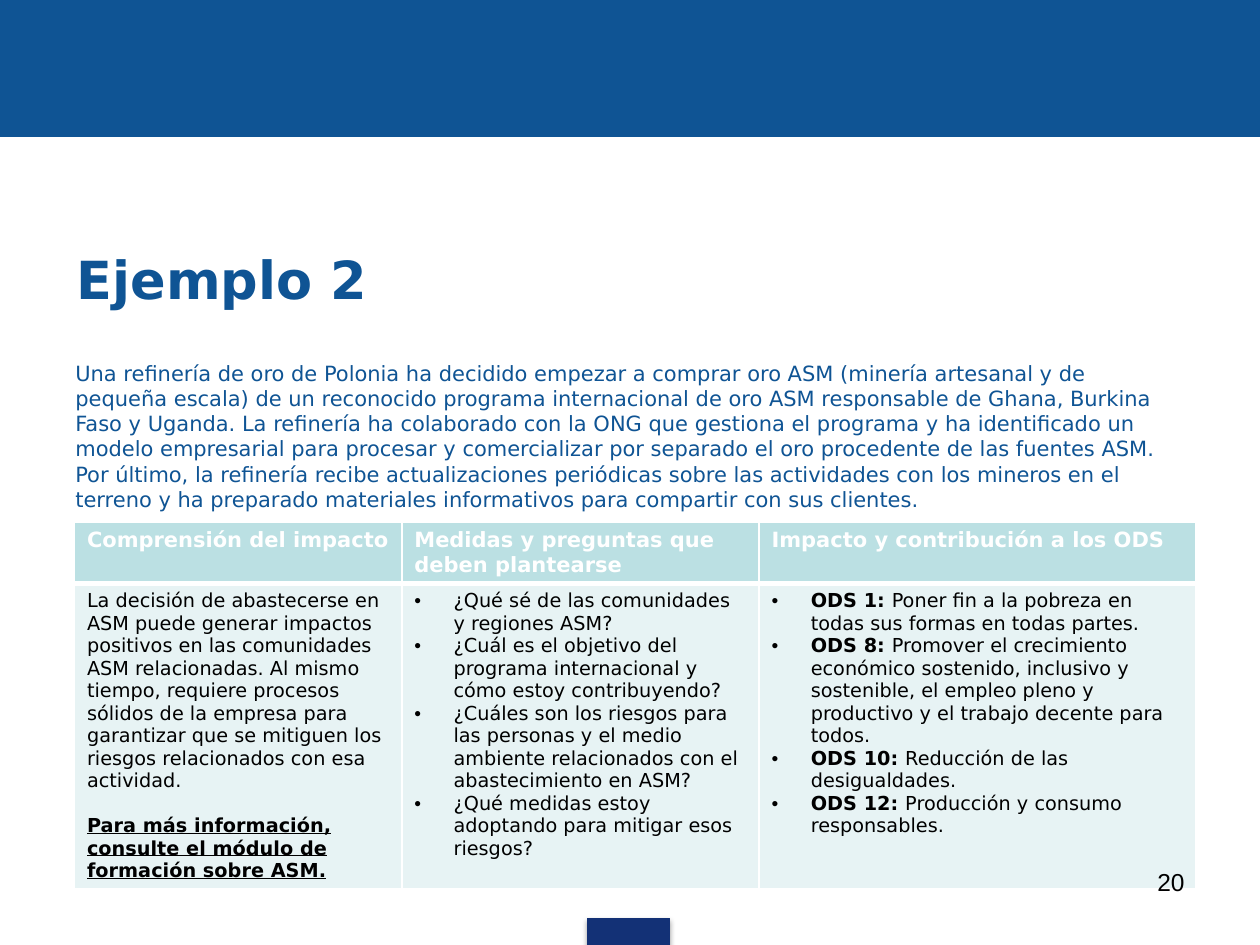
from lxml import etree
from pptx import Presentation
from pptx.dml.color import RGBColor
from pptx.enum.shapes import MSO_SHAPE
from pptx.enum.text import MSO_ANCHOR, PP_ALIGN
from pptx.oxml import parse_xml
from pptx.oxml.ns import nsdecls, qn
from pptx.util import Cm, Pt

BLUE = RGBColor(0x0F, 0x54, 0x94)
NAVY = RGBColor(0x13, 0x31, 0x76)
TEAL = RGBColor(0xBB, 0xE0, 0xE3)
PALE = RGBColor(0xE7, 0xF3, 0xF4)
WHITE = RGBColor(0xFF, 0xFF, 0xFF)
BLACK = RGBColor(0, 0, 0)
FONT = "DejaVu Sans"
BULLET_INDENT = Cm(0.79)

HEADERS = [
    "Comprensión del impacto",
    "Medidas y preguntas que deben plantearse",
    "Impacto y contribución a los ODS",
]
# Each body paragraph is a (bold lead, plain text) pair.
IMPACT = [
    ("", "La decisión de abastecerse en ASM puede generar impactos positivos en las "
         "comunidades ASM relacionadas. Al mismo tiempo, requiere procesos sólidos de la "
         "empresa para garantizar que se mitiguen los riesgos relacionados con esa actividad."),
    ("Para más información, consulte el módulo de formación sobre ASM.", ""),
]
QUESTIONS = [
    ("", "¿Qué sé de las comunidades y regiones ASM?"),
    ("", "¿Cuál es el objetivo del programa internacional y cómo estoy contribuyendo?"),
    ("", "¿Cuáles son los riesgos para las personas y el medio ambiente relacionados con "
         "el abastecimiento en ASM?"),
    ("", "¿Qué medidas estoy adoptando para mitigar esos riesgos?"),
]
GOALS = [
    ("ODS 1: ", "Poner fin a la pobreza en todas sus formas en todas partes."),
    ("ODS 8: ", "Promover el crecimiento económico sostenido, inclusivo y sostenible, el "
                "empleo pleno y productivo y el trabajo decente para todos."),
    ("ODS 10: ", "Reducción de las desigualdades."),
    ("ODS 12: ", "Producción y consumo responsables."),
]
CASE = (
    "Una refinería de oro de Polonia ha decidido empezar a comprar oro ASM (minería "
    "artesanal y de pequeña escala) de un reconocido programa internacional de oro ASM "
    "responsable de Ghana, Burkina Faso y Uganda. La refinería ha colaborado con la ONG "
    "que gestiona el programa y ha identificado un modelo empresarial para procesar y "
    "comercializar por separado el oro procedente de las fuentes ASM. Por último, la "
    "refinería recibe actualizaciones periódicas sobre las actividades con los mineros en "
    "el terreno y ha preparado materiales informativos para compartir con sus clientes."
)


def style(font, size, color, bold=False, name=FONT):
    font.name = name
    font.size = Pt(size)
    font.bold = bold
    font.color.rgb = color


def finish_cell(cell, fill, top, bottom):
    """Fill the cell and give it white borders; top and bottom are widths in points."""
    cell.fill.solid()
    cell.fill.fore_color.rgb = fill
    properties = cell._tc.get_or_add_tcPr()
    for position, (side, width) in enumerate(zip("LRTB", (1, 1, top, bottom))):
        properties.insert(position, parse_xml(
            f'<a:ln{side} {nsdecls("a")} w="{Pt(width)}"><a:solidFill>'
            f'<a:srgbClr val="{WHITE}"/></a:solidFill></a:ln{side}>'))


prs = Presentation()
prs.slide_width, prs.slide_height = Cm(25.4), Cm(19.05)
slide = prs.slides.add_slide(prs.slide_layouts[6])

# Top band and footer tab
for left, top, width, height, color in [
    (0, 0, 25.4, 2.75, BLUE),
    (11.84, 18.51, 1.66, 0.55, NAVY),
]:
    band = slide.shapes.add_shape(
        MSO_SHAPE.RECTANGLE, Cm(left), Cm(top), Cm(width), Cm(height))
    band.shadow.inherit = False
    band.fill.solid()
    band.fill.fore_color.rgb = color
    band.line.color.rgb = color
    band.line.width = Pt(0.75)
footer_tab = band
footer_tab._element.spPr.find(qn("a:effectLst")).append(parse_xml(
    f'<a:outerShdw {nsdecls("a")} blurRad="{Pt(3.1)}" dist="{Pt(1.8)}" dir="5400000" '
    'rotWithShape="0"><a:srgbClr val="000000"><a:alpha val="35000"/></a:srgbClr>'
    '</a:outerShdw>'))

# Impact table
table_frame = slide.shapes.add_table(2, 3, Cm(1.5), Cm(10.52), Cm(22.6), Cm(7.35))
table = table_frame.table
for column, width in zip(table.columns, (6.6, 7.2, 8.8)):
    column.width = Cm(width)
for row, height in zip(table.rows, (1.24, 6.11)):
    row.height = Cm(height)

for cell, heading in zip(table.rows[0].cells, HEADERS):
    cell.text = heading
    style(cell.text_frame.paragraphs[0].font, 12, WHITE, bold=True)
    finish_cell(cell, TEAL, top=1, bottom=3)

for cell, entries in zip(table.rows[1].cells, (IMPACT, QUESTIONS, GOALS)):
    frame = cell.text_frame
    for i, (lead, text) in enumerate(entries):
        paragraph = frame.add_paragraph() if i else frame.paragraphs[0]
        if entries is not IMPACT:
            bulleted = paragraph._p.get_or_add_pPr()
            bulleted.set("marL", str(BULLET_INDENT))
            bulleted.set("indent", str(-BULLET_INDENT))
            etree.SubElement(bulleted, qn("a:buFont"), typeface="Arial")
            etree.SubElement(bulleted, qn("a:buChar"), char="•")
        elif i:
            paragraph.space_before = Pt(12.8)
        style(paragraph.font, 11, BLACK)
        if lead:
            lead_run = paragraph.add_run()
            lead_run.text = lead
            lead_run.font.bold = True
            if not text:
                lead_run.font.underline = True
        if text:
            paragraph.add_run().text = text
    finish_cell(cell, PALE, top=3, bottom=1)

# Title, case description and page number
for left, top, width, height, text, size, color, bold, name, anchor, align in [
    (1.3, 4.32, 22.86, 2.59, "Ejemplo 2", 30, BLUE, True, FONT,
     MSO_ANCHOR.MIDDLE, PP_ALIGN.LEFT),
    (1.27, 7.14, 22.86, 3.2, CASE, 12, BLUE, False, FONT,
     MSO_ANCHOR.TOP, PP_ALIGN.LEFT),
    (18.21, 17.35, 5.92, 1.32, "20", 14, BLACK, False, "Arial",
     MSO_ANCHOR.TOP, PP_ALIGN.RIGHT),
]:
    frame = slide.shapes.add_textbox(Cm(left), Cm(top), Cm(width), Cm(height)).text_frame
    frame.word_wrap = True
    frame.vertical_anchor = anchor
    frame.text = text
    frame.paragraphs[0].alignment = align
    style(frame.paragraphs[0].font, size, color, bold, name)

prs.save("out.pptx")
